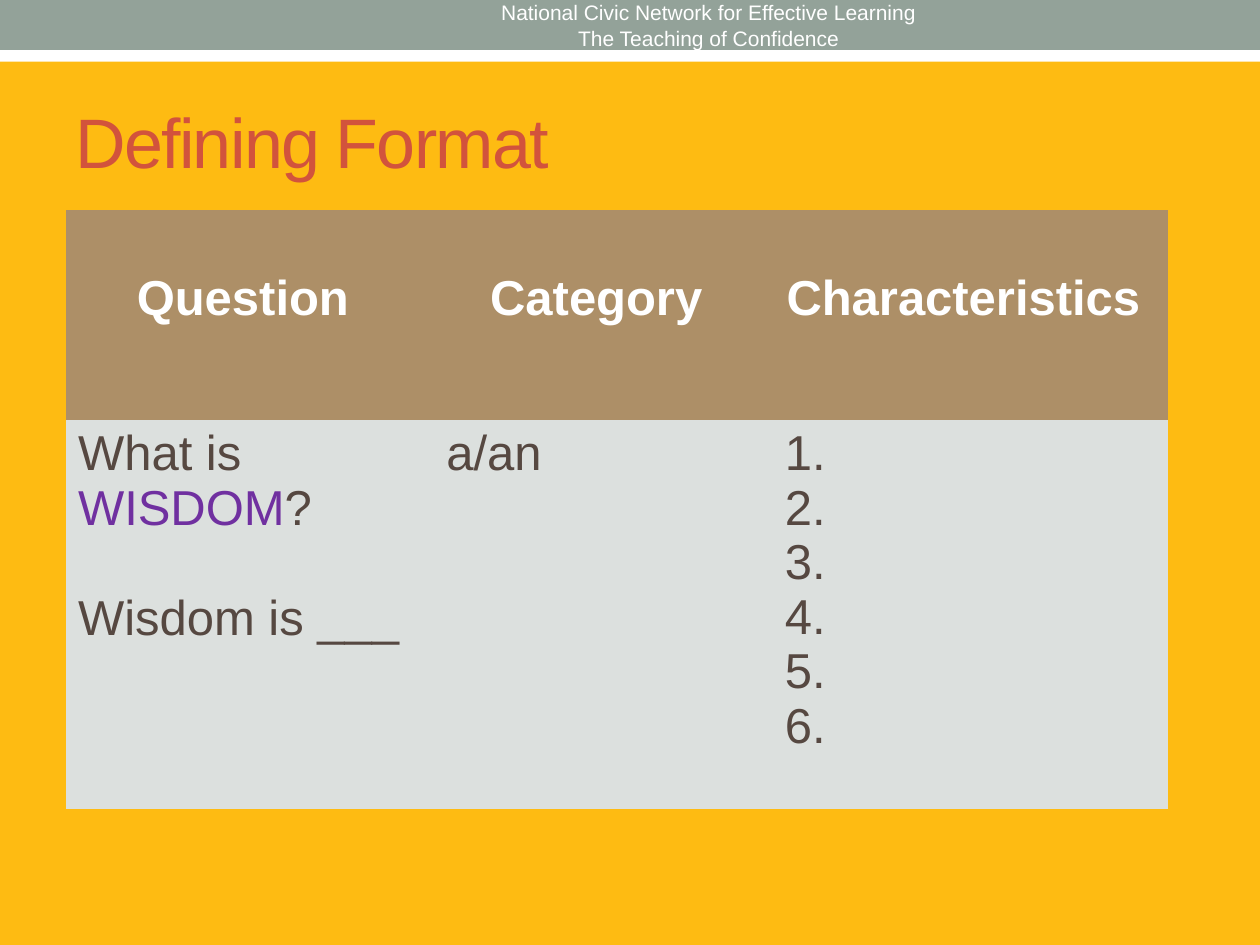
from pptx import Presentation
from pptx.dml.color import RGBColor
from pptx.enum.shapes import MSO_SHAPE
from pptx.enum.text import MSO_ANCHOR, PP_ALIGN
from pptx.util import Inches, Pt

FONT = "Arial"
AMBER = RGBColor(0xFE, 0xBB, 0x12)
SAGE = RGBColor(0x93, 0xA2, 0x99)
WHITE = RGBColor(0xFF, 0xFF, 0xFF)
RED = RGBColor(0xD2, 0x53, 0x3C)
TAN = RGBColor(0xAD, 0x8F, 0x67)
MIST = RGBColor(0xDC, 0xE0, 0xDE)
BROWN = RGBColor(0x56, 0x48, 0x41)
PURPLE = RGBColor(0x70, 0x30, 0xA0)

NO_STYLE = "{2D5ABB26-0587-4C30-8999-92F81FD0307C}"
HEADINGS = ["Question ", "Category ", "Characteristics "]
ANSWERS = [
    [[("What is ", BROWN), ("WISDOM", PURPLE), ("?", BROWN)],
     [("Wisdom is ___", BROWN)]],
    [[("a/an", BROWN)]],
    [[(f"{n}.", BROWN)] for n in range(1, 7)],
]


def add_run(p, text, size, color, bold=False):
    r = p.add_run()
    r.text = text
    r.font.name, r.font.size, r.font.bold = FONT, Pt(size), bold
    r.font.color.rgb = color
    return r


def add_band(s, left, top, width, height, color):
    sp = s.shapes.add_shape(MSO_SHAPE.RECTANGLE, left, top, width, height)
    sp.shadow.inherit = False
    sp.fill.solid()
    sp.fill.fore_color.rgb = color
    sp.line.fill.background()


def add_header(s, left, top, width, height):
    add_band(s, left, top + height // 2, width, height // 2, WHITE)
    add_band(s, left, top, width, int(height * 0.81), SAGE)
    sp = s.shapes.add_textbox(left + int(width * 0.375), top + Inches(0.02),
                              int(width * 0.45), Inches(0.36))
    tf = sp.text_frame
    tf.word_wrap = True
    tf.vertical_anchor = MSO_ANCHOR.MIDDLE
    lines = ["National Civic Network for Effective Learning",
             "The Teaching of Confidence"]
    tf.text = "\n".join(lines)
    for p in tf.paragraphs:
        p.alignment = PP_ALIGN.CENTER
        p.font.name, p.font.size = FONT, Pt(12)
        for r in p.runs:
            r.font.name, r.font.size = FONT, Pt(12)
            r.font.color.rgb = WHITE
    tf.paragraphs[0]._p.get_or_add_pPr().set("marR", str(Inches(0.75)))


def add_title(s, left, top, width, height):
    sp = s.shapes.title
    sp.left, sp.top, sp.width, sp.height = left, top, width, height
    tf = sp.text_frame
    tf.vertical_anchor = MSO_ANCHOR.MIDDLE
    p = tf.paragraphs[0]
    p.alignment = PP_ALIGN.LEFT
    r = add_run(p, "Defining Format", 40, RED)
    r._r.get_or_add_rPr().set("spc", "-100")


def add_format_table(s, left, top, width, height):
    frame = s.shapes.add_table(2, 3, left, top, width, height)
    table = frame.table
    table._tbl.tblPr.find("{*}tableStyleId").text = NO_STYLE
    for column, share in zip(table.columns, (0.334, 0.307, 0.359)):
        column.width = int(width * share)
    for row, share in zip(table.rows, (0.35, 0.65)):
        row.height = int(height * share)

    for col, (heading, answer) in enumerate(zip(HEADINGS, ANSWERS)):
        cell = table.cell(0, col)
        cell.fill.solid()
        cell.fill.fore_color.rgb = TAN
        cell.margin_top = Inches(0.48)
        p = cell.text_frame.paragraphs[0]
        p.alignment = PP_ALIGN.CENTER
        add_run(p, heading, 28, WHITE, bold=True)

        cell = table.cell(1, col)
        cell.fill.solid()
        cell.fill.fore_color.rgb = MIST
        tf = cell.text_frame
        for i, parts in enumerate(answer):
            p = tf.add_paragraph() if i else tf.paragraphs[0]
            if col == 0 and i:
                p.space_before = Pt(32)
            for text, color in parts:
                add_run(p, text, 28, color)


def main():
    prs = Presentation()
    prs.slide_width, prs.slide_height = Inches(10), Inches(7.5)
    s = prs.slides.add_slide(prs.slide_layouts[5])
    s.background.fill.solid()
    s.background.fill.fore_color.rgb = AMBER
    w, h = prs.slide_width, prs.slide_height
    add_header(s, 0, 0, w, Inches(0.49))
    add_title(s, int(w * 0.05), int(h * 0.077), int(w * 0.9), int(h * 0.144))
    add_format_table(s, Inches(0.52), Inches(1.67), Inches(8.75), Inches(4.75))
    prs.save("out.pptx")


if __name__ == "__main__":
    main()
